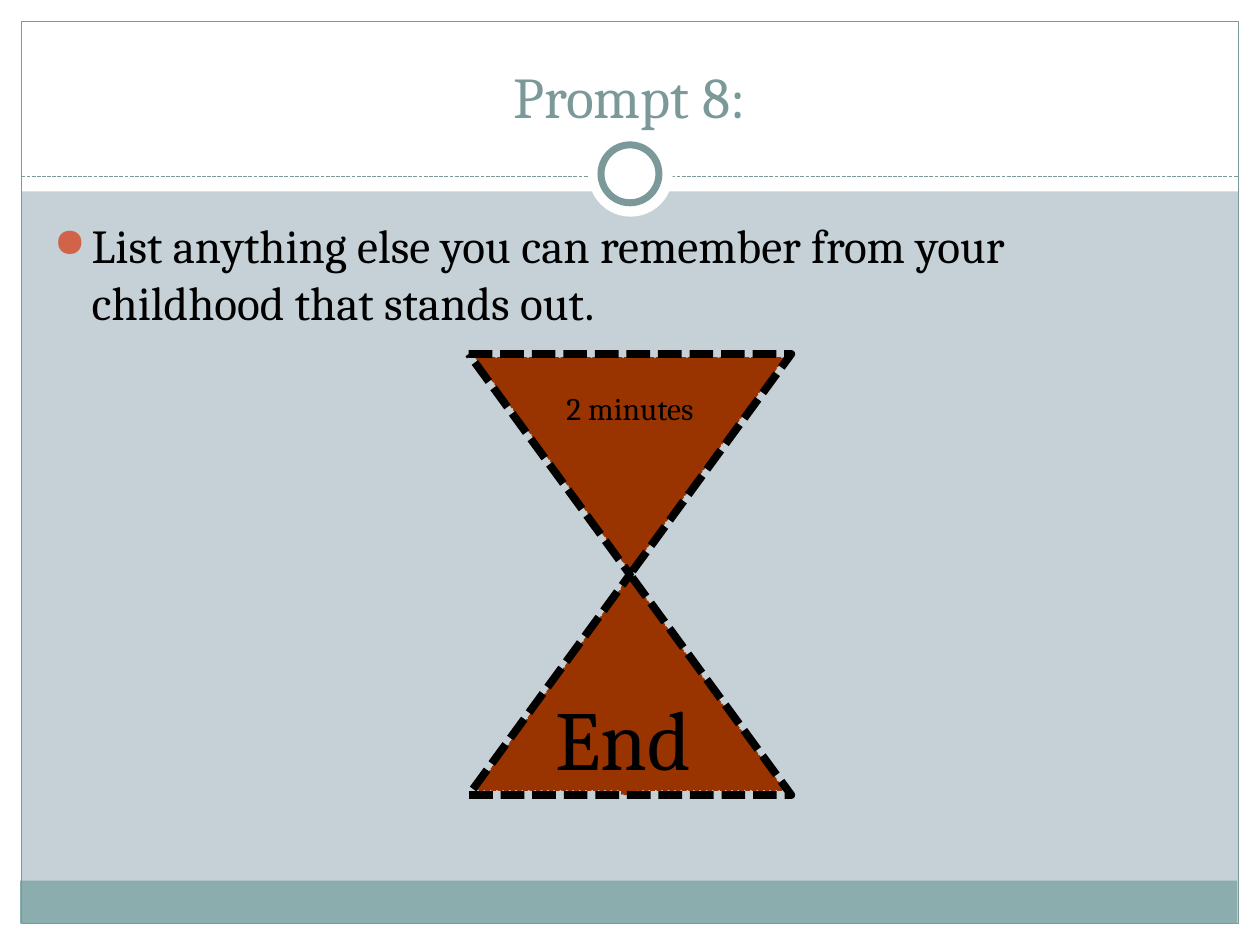
from typing import NamedTuple, Optional

from lxml.etree import SubElement
from pptx import Presentation
from pptx.dml.color import RGBColor
from pptx.enum.dml import MSO_LINE
from pptx.enum.shapes import MSO_CONNECTOR, MSO_SHAPE
from pptx.enum.text import MSO_ANCHOR, MSO_AUTO_SIZE, PP_ALIGN
from pptx.oxml.ns import qn
from pptx.util import Inches, Pt

FONT = "Cambria"
WHITE, BLACK = "FFFFFF", "000000"
TEAL, BAND, BACKGROUND = "7C999A", "8CADAE", "C5D1D7"
SAND, BULLET = "993300", "D16349"


class Figure(NamedTuple):
    kind: MSO_SHAPE
    left: float
    top: float
    width: float
    height: float
    fill: Optional[str] = None
    line: Optional[str] = None
    weight: float = 0.75
    dashed: bool = False
    rotation: float = 0


class Label(NamedTuple):
    text: str
    left: float
    top: float
    width: float
    height: float
    size: float
    align: PP_ALIGN = PP_ALIGN.LEFT
    wrap: bool = False


FRAME = [
    Figure(MSO_SHAPE.RECTANGLE, 0, 7.33, 10, 0.17, WHITE),
    Figure(MSO_SHAPE.RECTANGLE, 0, 0, 10, 1.52, WHITE),
    Figure(MSO_SHAPE.RECTANGLE, 0, 0, 0.17, 7.5, WHITE),
    Figure(MSO_SHAPE.RECTANGLE, 9.83, 0, 0.17, 7.5, WHITE),
    Figure(MSO_SHAPE.RECTANGLE, 0.16, 6.99, 9.66, 0.34, BAND),
    Figure(MSO_SHAPE.RECTANGLE, 0.17, 0.17, 9.66, 7.16, None, TEAL),
]
RING = [
    Figure(MSO_SHAPE.OVAL, 4.67, 1.05, 0.67, 0.67, WHITE),
    Figure(MSO_SHAPE.OVAL, 4.77, 1.15, 0.46, 0.46, WHITE, TEAL, 4),
]
HOURGLASS = [
    Figure(MSO_SHAPE.ISOSCELES_TRIANGLE, 3.78, 4.58, 2.44, 1.69, SAND, SAND, 0.9, True),
    Figure(MSO_SHAPE.ISOSCELES_TRIANGLE, 3.78, 2.84, 2.44, 1.69, SAND, SAND, 0.9, True, 180),
    Figure(MSO_SHAPE.PENTAGON, 4.13, 5.38, 1.73, 0.12, SAND, SAND, 0.9, True, 270),
    Figure(MSO_SHAPE.FLOWCHART_COLLATE, 3.72, 2.81, 2.56, 3.5, None, BLACK, 4.5, True),
]
PROMPT = Label("List anything else you can remember from your childhood that stands out.",
               0.33, 1.67, 9.3, 1.07, 27, wrap=True)
TIMER_LABELS = [
    Label("2 minutes", 4.35, 3.04, 1.3, 0.4, 18, PP_ALIGN.CENTER),
    Label("End", 4.31, 5.4, 1.39, 0.9, 48),
]


def color(value: str) -> RGBColor:
    return RGBColor.from_string(value)


def draw_figure(page, figure: Figure) -> None:
    shape = page.shapes.add_shape(
        figure.kind, Inches(figure.left), Inches(figure.top),
        Inches(figure.width), Inches(figure.height))
    shape.shadow.inherit = False
    shape.rotation = figure.rotation
    if figure.fill:
        shape.fill.solid()
        shape.fill.fore_color.rgb = color(figure.fill)
    else:
        shape.fill.background()
    if figure.line:
        shape.line.color.rgb = color(figure.line)
        shape.line.width = Pt(figure.weight)
        if figure.dashed:
            shape.line.dash_style = MSO_LINE.SQUARE_DOT
    else:
        shape.line.fill.background()


def draw_divider(page) -> None:
    divider = page.shapes.add_connector(
        MSO_CONNECTOR.STRAIGHT, Inches(0.17), Inches(1.4), Inches(9.83), Inches(1.4))
    divider.line.color.rgb = color(TEAL)
    divider.line.width = Pt(0.75)
    divider.line.dash_style = MSO_LINE.SQUARE_DOT
    SubElement(divider._element.spPr, qn("a:effectLst"))


def write(para, text: str, size: float, ink: str, align: PP_ALIGN) -> None:
    para.text = text
    para.alignment = align
    for span in para.runs:
        span.font.name = FONT
        span.font.size = Pt(size)
        span.font.color.rgb = color(ink)


def draw_label(page, label: Label):
    """Add the text box and return its paragraph."""
    box = page.shapes.add_textbox(
        Inches(label.left), Inches(label.top), Inches(label.width), Inches(label.height))
    frame = box.text_frame
    frame.word_wrap = label.wrap
    frame.auto_size = MSO_AUTO_SIZE.NONE if label.wrap else MSO_AUTO_SIZE.SHAPE_TO_FIT_TEXT
    para = frame.paragraphs[0]
    write(para, label.text, label.size, BLACK, label.align)
    return para


def add_bullet(para) -> None:
    para.space_before = Pt(5.4)
    properties = para._p.get_or_add_pPr()
    properties.set("marL", str(Inches(0.3)))
    properties.set("indent", str(Inches(-0.3)))
    bullet_color = SubElement(properties, qn("a:buClr"))
    SubElement(bullet_color, qn("a:srgbClr"), val=BULLET)
    SubElement(properties, qn("a:buSzPct"), val="85000")
    SubElement(properties, qn("a:buChar"), char="●")


def place_title(page, text: str) -> None:
    title = page.shapes.title
    title.left, title.top = Inches(0.33), Inches(0.25)
    title.width, title.height = Inches(9.33), Inches(0.83)
    frame = title.text_frame
    frame.auto_size = MSO_AUTO_SIZE.NONE
    frame.vertical_anchor = MSO_ANCHOR.BOTTOM
    write(frame.paragraphs[0], text, 33, TEAL, PP_ALIGN.CENTER)
    page.shapes._spTree.append(title._element)  # bring in front of the frame


def main() -> None:
    deck = Presentation()
    deck.slide_width, deck.slide_height = Inches(10), Inches(7.5)
    page = deck.slides.add_slide(deck.slide_layouts[5])
    page.background.fill.solid()
    page.background.fill.fore_color.rgb = color(BACKGROUND)

    for figure in FRAME:
        draw_figure(page, figure)
    draw_divider(page)
    for figure in RING:
        draw_figure(page, figure)
    place_title(page, "Prompt 8:")
    add_bullet(draw_label(page, PROMPT))
    for figure in HOURGLASS:
        draw_figure(page, figure)
    for label in TIMER_LABELS:
        draw_label(page, label)
    deck.save("out.pptx")


if __name__ == "__main__":
    main()
